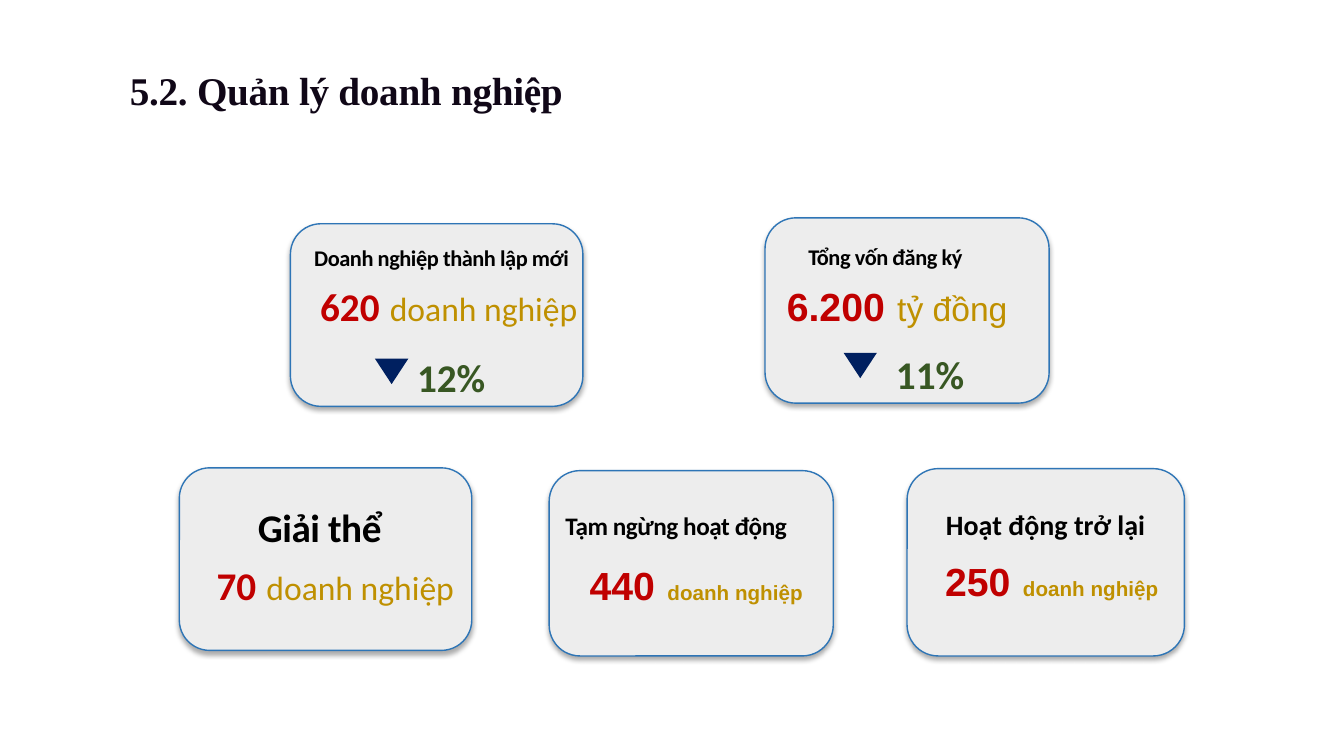
from dataclasses import dataclass

from lxml import etree
from pptx import Presentation
from pptx import util as u
from pptx.dml.color import RGBColor
from pptx.enum import shapes, text
from pptx.oxml import ns


@dataclass(frozen=True)
class Theme:
    card: str = "EDEDED"
    border: str = "2E75B6"
    ink: str = "000000"
    heading: str = "100717"
    number: str = "C00000"
    unit: str = "BF9000"
    percent: str = "385723"
    marker: str = "002060"
    title_font: str = "Times New Roman"
    body_font: str = "Calibri"
    figure_font: str = "Arial"
    large: float = 28
    gap: float = 32
    unit_large: float = 24
    unit_small: float = 14.7


def add_text(paragraph, content, *, size, color, font, bold=True, spacing=0):
    run = paragraph.add_run()
    run.text = content
    run.font.size = u.Pt(size)
    run.font.name = font
    run.font.bold = bold
    run.font.color.rgb = RGBColor.from_string(color)
    if spacing:
        run.font._element.set("spc", str(round(spacing * 100)))


class SlideBuilder:
    def __init__(self, slide, theme):
        self.slide = slide
        self.theme = theme

    def prepare(self, shape, wrap=False, align=text.PP_ALIGN.LEFT):
        frame = shape.text_frame
        frame.word_wrap = wrap
        frame.auto_size = text.MSO_AUTO_SIZE.SHAPE_TO_FIT_TEXT
        frame.vertical_anchor = text.MSO_ANCHOR.TOP
        paragraph = frame.paragraphs[0]
        paragraph.alignment = align
        return paragraph

    def title(self, content, box):
        shape = self.slide.shapes.title
        shape.left, shape.top, shape.width, shape.height = map(u.Cm, box)
        add_text(self.prepare(shape), content, size=self.theme.large,
                 color=self.theme.heading, font=self.theme.title_font, spacing=-0.2)

    def text_box(self, box, **options):
        shape = self.slide.shapes.add_textbox(*map(u.Cm, box))
        return self.prepare(shape, **options)

    def solid(self, kind, box, color):
        shape = self.slide.shapes.add_shape(kind, *map(u.Cm, box))
        shape.shadow.inherit = False
        shape.fill.solid()
        shape.fill.fore_color.rgb = RGBColor.from_string(color)
        shape.line.fill.background()
        return shape

    def card(self, box):
        shape = self.solid(shapes.MSO_SHAPE.ROUNDED_RECTANGLE, box, self.theme.card)
        shape.line.color.rgb = RGBColor.from_string(self.theme.border)
        shape.line.width = u.Pt(1)
        effects = shape._element.spPr.find(ns.qn("a:effectLst"))
        shadow = etree.SubElement(
            effects, ns.qn("a:outerShdw"), blurRad=str(u.Pt(3.5)),
            dist=str(u.Pt(2.2)), dir="5400000", algn="t", rotWithShape="0")
        color = etree.SubElement(shadow, ns.qn("a:srgbClr"), val=self.theme.ink)
        etree.SubElement(color, ns.qn("a:alpha"), val="32000")

    def label(self, content, box, size, spacing=-0.3, **options):
        add_text(self.text_box(box, **options), content, size=size,
                 color=self.theme.ink, font=self.theme.body_font, spacing=spacing)

    def amount(self, number, unit, box, font, unit_size, unit_bold):
        theme = self.theme
        paragraph = self.text_box(box)
        add_text(paragraph, number, size=theme.large, color=theme.number, font=font)
        add_text(paragraph, " ", size=theme.gap, color=theme.percent, font=font)
        add_text(paragraph, unit, size=unit_size, color=theme.unit, font=font, bold=unit_bold)

    def decrease(self, percent, marker_box, percent_box):
        theme = self.theme
        self.solid(shapes.MSO_SHAPE.FLOWCHART_MERGE, marker_box, theme.marker)
        add_text(self.text_box(percent_box), percent, size=theme.large,
                 color=theme.percent, font=theme.body_font)


def main():
    theme = Theme()
    presentation = Presentation()
    presentation.slide_width = u.Cm(33.87)
    presentation.slide_height = u.Cm(19.05)
    slide = presentation.slides.add_slide(presentation.slide_layouts[5])
    builder = SlideBuilder(slide, theme)
    builder.title("5.2. Quản lý doanh nghiệp", (3.02, 1.55, 11.58, 1.45))

    calibri_large = (theme.body_font, theme.unit_large, False)
    arial_large = (theme.figure_font, theme.unit_large, False)
    arial_small = (theme.figure_font, theme.unit_small, True)
    centered = {"spacing": 0, "align": text.PP_ALIGN.CENTER}
    cards = [
        ((7.32, 5.64, 7.37, 4.6),
         "Doanh nghiệp thành lập mới", (7.67, 6.02, 7.01, 1.63), 16, {},
         "620", "doanh nghiệp", (7.82, 6.86, 7.06, 1.63), calibri_large),
        ((19.28, 5.49, 7.16, 4.67),
         "Tổng vốn đăng ký", (20.12, 5.99, 5.21, 1.63), 16, {},
         "6.200", "tỷ đồng", (19.58, 6.86, 6.15, 1.63), arial_large),
        ((4.52, 11.79, 7.37, 4.6),
         "Giải thể", (6.25, 12.55, 4.19, 2.13), theme.large, {"wrap": True},
         "70", "doanh nghiệp", (5.21, 13.87, 6.55, 1.63), calibri_large),
        ((13.84, 11.86, 7.16, 4.67),
         "Tạm ngừng hoạt động", (14, 12.73, 7.11, 1.7), 18, {},
         "440", "doanh nghiệp", (14.61, 13.87, 5.94, 1.63), arial_small),
        ((22.86, 11.81, 6.99, 4.72),
         "Hoạt động trở lại", (23.57, 12.67, 5.56, 1.8), 20, centered,
         "250", "doanh nghiệp", (23.57, 13.79, 5.94, 1.63), arial_small),
    ]
    for box, label, label_box, size, options, number, unit, amount_box, style in cards:
        builder.card(box)
        builder.label(label, label_box, size, **options)
        builder.amount(number, unit, amount_box, *style)

    builder.decrease("12%", (9.45, 9.04, 0.84, 0.64), (10.26, 8.79, 2.26, 1.45))
    builder.decrease("11%", (21.26, 8.89, 0.84, 0.64), (22.33, 8.71, 2.26, 1.45))
    presentation.save("out.pptx")


if __name__ == "__main__":
    main()
